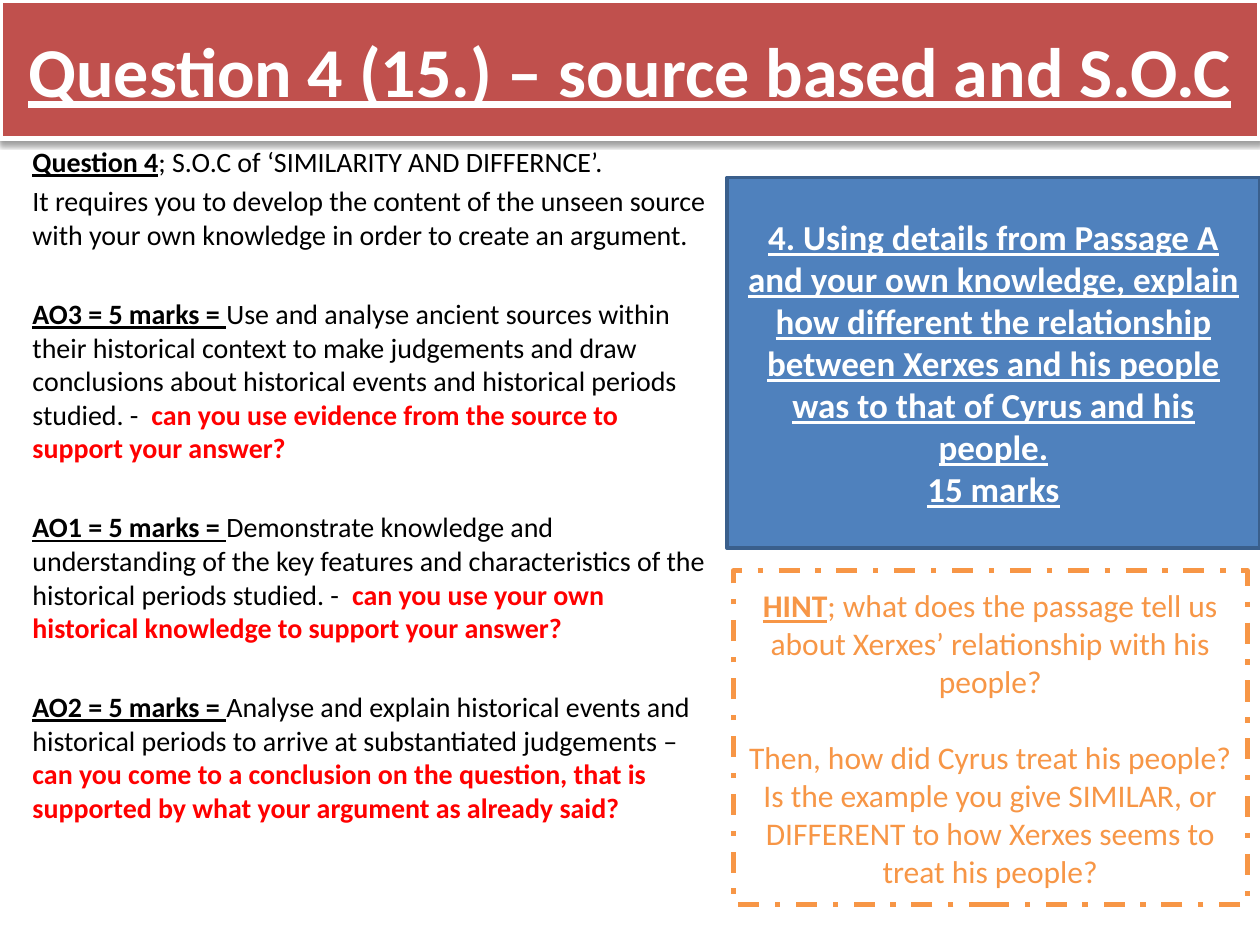
from lxml import etree
from pptx import Presentation
from pptx.dml.color import RGBColor
from pptx.enum.dml import MSO_LINE
from pptx.enum.shapes import MSO_SHAPE as Shape
from pptx.enum.text import MSO_ANCHOR as Anchor, PP_ALIGN as Align
from pptx.oxml import parse_xml
from pptx.util import Pt

WHITE, BLACK, RED, ORANGE = "FFFFFF", "000000", "FF0000", "F79646"


def color(value):
    return RGBColor.from_string(value)


def write(box, paragraphs, size, align, anchor):
    """Each paragraph is (space before, [(text, colour, bold, underline), ...])."""
    frame = box.text_frame
    frame.word_wrap = True
    frame.vertical_anchor = anchor
    for index, (space, spans) in enumerate(paragraphs):
        para = frame.paragraphs[0] if index == 0 else frame.add_paragraph()
        para.alignment = align
        if space:
            para.space_before = Pt(space)
        for text, tint, bold, underline in spans:
            span = para.add_run()
            span.text = text
            span.font.name = "Calibri"
            span.font.size = Pt(size)
            span.font.color.rgb = color(tint)
            span.font.bold = bold
            span.font.underline = underline


deck = Presentation()
deck.slide_width, deck.slide_height = Pt(720), Pt(540)
page = deck.slides.add_slide(deck.slide_layouts[6])

# Objectives column
objectives = [
    ("AO3 = 5 marks = ",
     "Use and analyse ancient sources within their historical context to make judgements "
     "and draw conclusions about historical events and historical periods studied. -  ",
     "can you use evidence from the source to support your answer?"),
    ("AO1 = 5 marks = ",
     "Demonstrate knowledge and understanding of the key features and characteristics "
     "of the historical periods studied. -  ",
     "can you use your own historical knowledge to support your answer?"),
    ("AO2 = 5 marks = ",
     "Analyse and explain historical events and historical periods to arrive at "
     "substantiated judgements – ",
     "can you come to a conclusion on the question, that is supported by what your "
     "argument as already said?"),
]
column = [
    (0, [("Question 4", BLACK, True, True),
         ("; S.O.C of ‘SIMILARITY AND DIFFERNCE’.", BLACK, False, False)]),
    (3.2, [("It requires you to develop the content of the unseen source with your own "
            "knowledge in order to create an argument.", BLACK, False, False)]),
]
for marks, skill, prompt in objectives:
    column.append((26, [(marks, BLACK, True, True),
                        (skill, BLACK, False, False),
                        (prompt, RED, True, False)]))
body = page.shapes.add_textbox(Pt(11.5), Pt(79.2), Pt(404), Pt(451.4))
write(body, column, 16, Align.LEFT, Anchor.TOP)

# Title banner, question panel and hint panel
panels = [
    ((0, 0, 720, 79.2), "C0504D", WHITE, 3, 40, [
        (0, [("Question 4 (15.) – source based and S.O.C", WHITE, True, True)])]),
    ((415.4, 101.5, 304.6, 211.7), "4F81BD", "3A5F8C", 2, 20, [
        (0, [("4. Using details from Passage A and your own knowledge, explain how "
              "different the relationship between Xerxes and his people was to that of "
              "Cyrus and his people.", WHITE, True, True)]),
        (0, [("15 marks", WHITE, True, True)])]),
    ((419, 326.2, 293.8, 190.8), None, ORANGE, 3, 18, [
        (0, [("HINT", ORANGE, True, True),
             ("; what does the passage tell us about Xerxes’ relationship with his people?",
              ORANGE, False, False)]),
        (22, [("Then, how did Cyrus treat his people? Is the example you give SIMILAR, or "
               "DIFFERENT to how Xerxes seems to treat his people?",
               ORANGE, False, False)])]),
]
boxes = []
for place, fill, outline, width, size, paragraphs in panels:
    box = page.shapes.add_shape(Shape.RECTANGLE, *[Pt(length) for length in place])
    box.shadow.inherit = False
    if fill:
        box.fill.solid()
        box.fill.fore_color.rgb = color(fill)
    else:
        box.fill.background()
    box.line.color.rgb = color(outline)
    box.line.width = Pt(width)
    write(box, paragraphs, size, Align.CENTER, Anchor.MIDDLE)
    boxes.append(box)
banner, question, hint = boxes
hint.line.dash_style = MSO_LINE.DASH_DOT

# Soft shadow below the banner
shadow = parse_xml(
    '<a:outerShdw xmlns:a="http://schemas.openxmlformats.org/drawingml/2006/main" '
    f'blurRad="{Pt(3.1)}" dist="{Pt(1.6)}" dir="5400000" rotWithShape="0">'
    '<a:srgbClr val="000000"><a:alpha val="38000"/></a:srgbClr></a:outerShdw>')
effects = banner._element.spPr.find(etree.QName(shadow).namespace.join("{}") + "effectLst")
effects.append(shadow)

deck.save("out.pptx")
